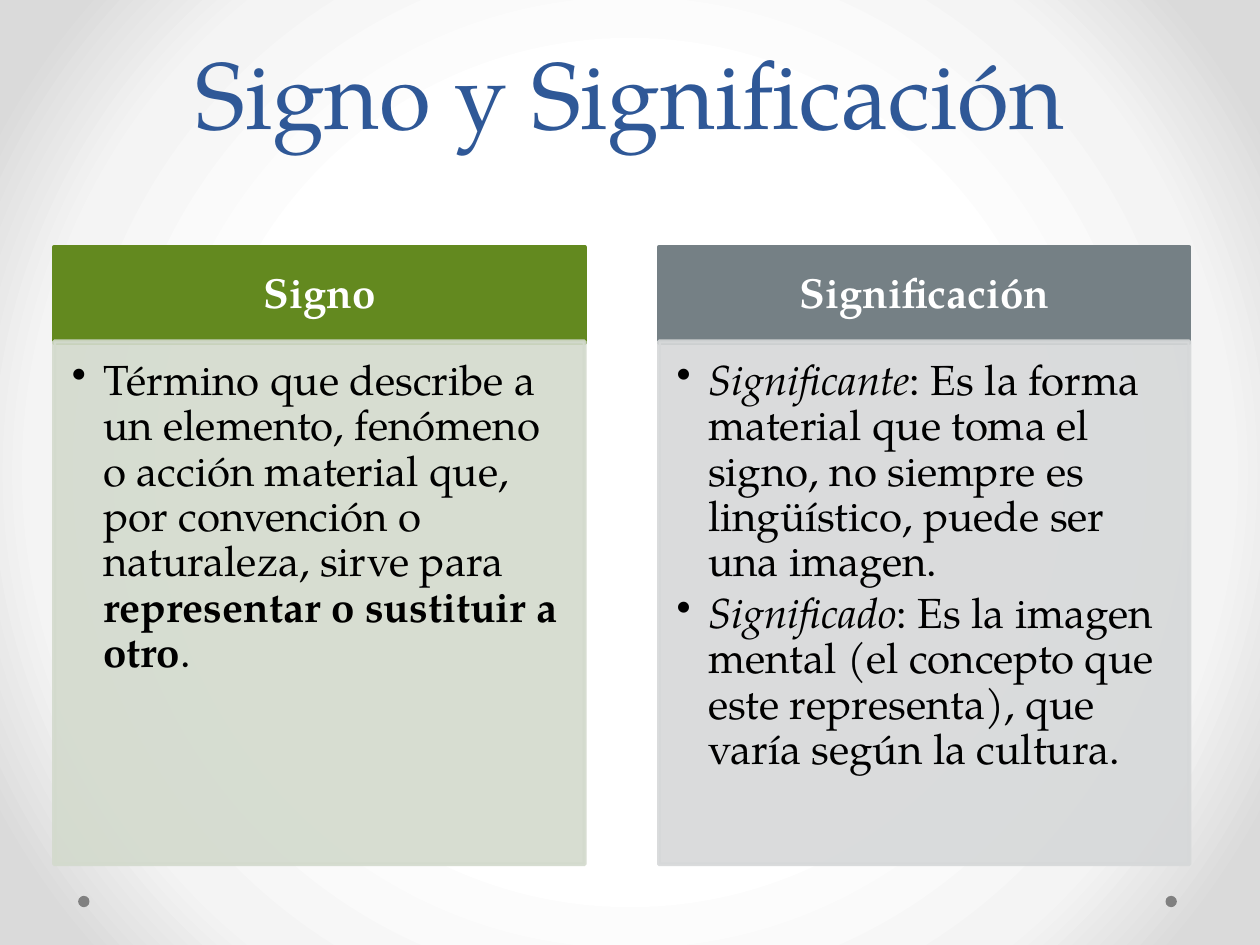
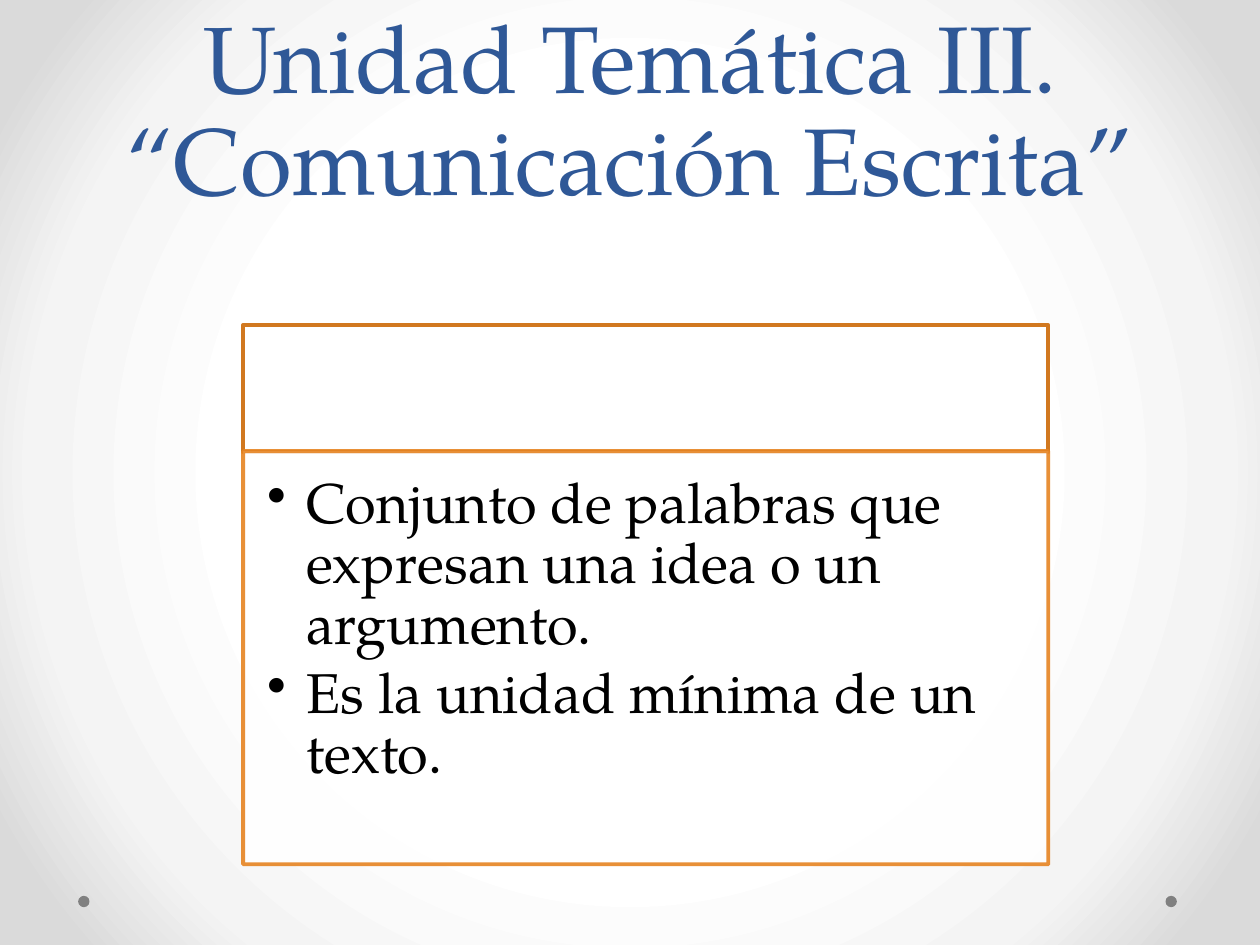
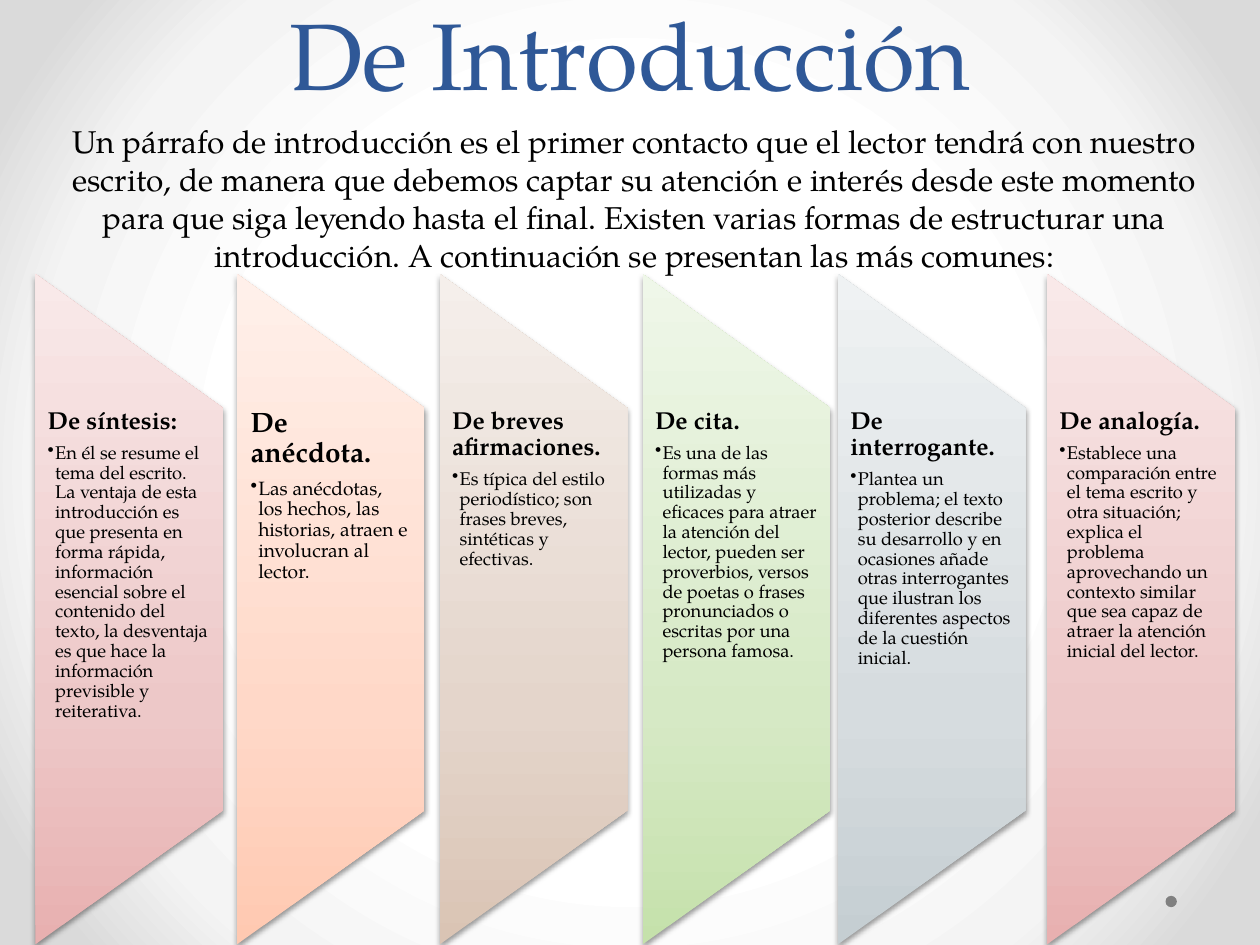
from lxml.etree import SubElement
from pptx import Presentation
from pptx.dml.color import RGBColor
from pptx.enum.shapes import MSO_SHAPE
from pptx.enum.text import MSO_ANCHOR, PP_ALIGN
from pptx.oxml.ns import qn
from pptx.util import Inches, Pt

RECT, OVAL, BAND = MSO_SHAPE.RECTANGLE, MSO_SHAPE.OVAL, MSO_SHAPE.FLOWCHART_MANUAL_OPERATION
LEFT, CENTER = PP_ALIGN.LEFT, PP_ALIGN.CENTER
TOP, MIDDLE, BOTTOM = MSO_ANCHOR.TOP, MSO_ANCHOR.MIDDLE, MSO_ANCHOR.BOTTOM


class Theme:
    font = "TeX Gyre Pagella"
    title, text, light, dot = "2F5897", "000000", "FFFFFF", "808080"
    background = [(50, "FFFFFF"), (76, "F4F4F4"), (92, "DADADA")]
    green, green_pale = "63891F", "D3DACD"
    gray, gray_pale = "758085", "D6D8D9"
    orange_dark, orange = "D1781F", "E68422"
    rose = ("E8B0B0", "EDC8C8", "F9E9E9")
    peach = ("FFC9B1", "FFD8C8", "FFF0EA")
    sand = ("DAC4B4", "E4D5CB", "F5EFEB")
    leaf = ("C5E1AB", "D6E9C5", "EFF7E9")
    steel = ("C5CED2", "D6DCDF", "EFF2F3")
    title_size, title_spacing = 54, 58
    card_size, big_card_size, intro_size = 24, 32, 18


def write(tf, text, size, color=Theme.text, align=LEFT, spacing=None, after=0,
          bullet=0, anchor=None, inset=None):
    tf.word_wrap = True
    if anchor is not None:
        tf.vertical_anchor = anchor
    if inset:
        tf.margin_left, tf.margin_top, tf.margin_right, tf.margin_bottom = map(Inches, inset)
    p = tf.add_paragraph() if tf.text else tf.paragraphs[0]
    p.alignment = align
    p.line_spacing = spacing
    p.space_after = Pt(size * after)
    if bullet:
        pPr = p._p.get_or_add_pPr()
        pPr.set("marL", str(Inches(bullet)))
        pPr.set("indent", str(-Inches(bullet)))
        SubElement(pPr, qn("a:buChar")).set("char", "•")
    for words, style in [(text, "")] if isinstance(text, str) else text:
        for i, line in enumerate(words.split("\n")):
            if i:
                p.add_line_break()
            r = p.add_run()
            r.text = line
            r.font.name = Theme.font
            r.font.size = Pt(size)
            r.font.color.rgb = RGBColor.from_string(color)
            r.font.bold = "b" in style
            r.font.italic = "i" in style


def set_gradient(element, stops):
    grad = element.find(".//" + qn("a:gradFill"))
    grad.clear()
    grad.set("rotWithShape", "0")
    gs_list = SubElement(grad, qn("a:gsLst"))
    for pos, color in stops:
        gs = SubElement(gs_list, qn("a:gs"), pos=str(pos * 1000))
        SubElement(gs, qn("a:srgbClr"), val=color)
    return grad


prs = Presentation()
prs.slide_width, prs.slide_height = Inches(10), Inches(7.5)

titles = [
    ("Signo y Significación", 1.23),
    ("Unidad Temática III.\n“Comunicación Escrita”", 1.75),
    ("De Introducción", 0.92),
]
slides = []
for title, height in titles:
    s = prs.slides.add_slide(prs.slide_layouts[6])
    slides.append(s)
    s.background.fill.gradient()
    circle = SubElement(set_gradient(s._element, Theme.background), qn("a:path"), path="circle")
    SubElement(circle, qn("a:fillToRect"), l="50000", t="50000", r="50000", b="50000")
    for x in (9.25, 0.62):
        sp = s.shapes.add_shape(OVAL, Inches(x), Inches(7.11), Inches(0.09), Inches(0.09))
        sp.shadow.inherit = False
        sp.fill.solid()
        sp.fill.fore_color.rgb = RGBColor.from_string(Theme.dot)
        sp.line.fill.background()
    tb = s.shapes.add_textbox(Inches(0.5), 0, Inches(9), Inches(height))
    write(tb.text_frame, title, Theme.title_size, Theme.title, CENTER,
          Pt(Theme.title_spacing), anchor=BOTTOM)

signo = [[
    ("Término que describe a un elemento, fenómeno o acción material que, por convención "
     "o naturaleza, sirve para ", ""),
    ("representar o sustituir a otro", "b"),
    (".", ""),
]]
significacion = [
    [("Significante", "i"),
     (": Es la forma material que toma el signo, no siempre es lingüístico, "
      "puede ser una imagen.", "")],
    [("Significado", "i"),
     (": Es la imagen mental (el concepto que este representa), que varía según la cultura.", "")],
]
parrafo = [
    "Conjunto de palabras que expresan una idea o un argumento.",
    "Es la unidad mínima de un texto.",
]
small = dict(size=Theme.card_size, bullet=0.25, inset=(0.14, 0.14, 0.19, 0.21))
large = dict(size=Theme.big_card_size, bullet=0.31, inset=(0.19, 0.19, 0.25, 0.28))
cards = [
    (slides[0], 0.43, 1.96, 4.21, 0.76, "Signo", signo, small,
     (Theme.green, Theme.green), (Theme.green_pale, Theme.green_pale)),
    (slides[0], 5.23, 1.96, 4.21, 0.76, "Significación", significacion, small,
     (Theme.gray, Theme.gray), (Theme.gray_pale, Theme.gray_pale)),
    (slides[1], 1.93, 2.58, 6.39, 1.01, "", parrafo, large,
     (Theme.light, Theme.orange_dark), (Theme.light, Theme.orange)),
]
card_bottom = 6.86
for s, left, top, width, head_height, heading, items, body_format, head_colors, body_colors in cards:
    body_top = top + head_height - 0.01
    parts = [(top, head_height, head_colors), (body_top, card_bottom - body_top, body_colors)]
    head, body = [s.shapes.add_shape(RECT, Inches(left), Inches(y), Inches(width), Inches(h))
                  for y, h, colors in parts]
    for sp, (y, h, (fill, line)) in zip((head, body), parts):
        sp.shadow.inherit = False
        sp.fill.solid()
        sp.fill.fore_color.rgb = RGBColor.from_string(fill)
        sp.line.color.rgb = RGBColor.from_string(line)
        sp.line.width = Pt(2.25)
    for color in body._element.spPr.iter(qn("a:srgbClr")):
        SubElement(color, qn("a:alpha"), val="90000")
    if heading:
        write(head.text_frame, [(heading, "b")], Theme.card_size, Theme.light, CENTER, 0.9,
              anchor=MIDDLE, inset=(0.19, 0.11, 0.19, 0.11))
    for item in items:
        write(body.text_frame, item, spacing=0.9, after=0.15, anchor=TOP, **body_format)

s = slides[2]
bands = [
    (0.28, Theme.rose, 14, 10.5, "De síntesis:",
     "En él se resume el tema del escrito. La ventaja de esta introducción es que presenta en "
     "forma rápida, información esencial sobre el contenido del texto, la desventaja es que "
     "hace la información previsible y reiterativa."),
    (1.88, Theme.peach, 16, 11, "De anécdota.",
     "Las anécdotas, los hechos, las historias, atraen e involucran al lector."),
    (3.49, Theme.sand, 14, 10.5, "De breves afirmaciones.",
     "Es típica del estilo periodístico; son frases breves, sintéticas y efectivas."),
    (5.1, Theme.leaf, 14, 10.5, "De cita.",
     "Es una de las formas más utilizadas y eficaces para atraer la atención del lector, pueden "
     "ser proverbios, versos de poetas o frases pronunciados o escritas por una persona famosa."),
    (6.65, Theme.steel, 14, 10.5, "De interrogante.",
     "Plantea un problema; el texto posterior describe su desarrollo y en ocasiones añade otras "
     "interrogantes que ilustran los diferentes aspectos de la cuestión inicial."),
    (8.31, Theme.rose, 14, 10.5, "De analogía.",
     "Establece una comparación entre el tema escrito y otra situación; explica el problema "
     "aprovechando un contexto similar que sea capaz de atraer la atención inicial del lector."),
]
band_length, band_width = 5.32, 1.49
for left, colors, head_size, body_size, heading, body in bands:
    sp = s.shapes.add_shape(BAND, Inches(left + (band_width - band_length) / 2), Inches(4.09),
                            Inches(band_length), Inches(band_width))
    sp.rotation = 270
    sp.line.fill.background()
    sp.fill.gradient()
    grad = set_gradient(sp._element.spPr, zip((0, 35, 100), colors))
    SubElement(grad, qn("a:lin"), ang="16200000", scaled="0")
    sp.shadow.inherit = False
    shadow = SubElement(sp._element.spPr.find(qn("a:effectLst")), qn("a:outerShdw"),
                        blurRad=str(Pt(3.1)), dist=str(Pt(1.6)), dir="5400000", rotWithShape="0")
    shadow_color = SubElement(shadow, qn("a:srgbClr"), val=Theme.text)
    SubElement(shadow_color, qn("a:alpha"), val="38000")
    tb = s.shapes.add_textbox(Inches(left), Inches(3.24), Inches(band_width), Inches(3.19))
    side = 0.11 if head_size == 16 else 0.1
    write(tb.text_frame, [(heading, "b")], head_size, spacing=0.9, after=0.35,
          inset=(side, 0, side, 0))
    write(tb.text_frame, body, body_size, spacing=0.9, after=0.15, bullet=0.06)

tb = s.shapes.add_textbox(Inches(0.35), Inches(0.92), Inches(9.37), Inches(1.62))
write(tb.text_frame,
      "Un párrafo de introducción es el primer contacto que el lector tendrá con nuestro escrito, "
      "de manera que debemos captar su atención e interés desde este momento para que siga leyendo "
      "hasta el final. Existen varias formas de estructurar una introducción. A continuación se "
      "presentan las más comunes:", Theme.intro_size, align=CENTER)

prs.save("out.pptx")
